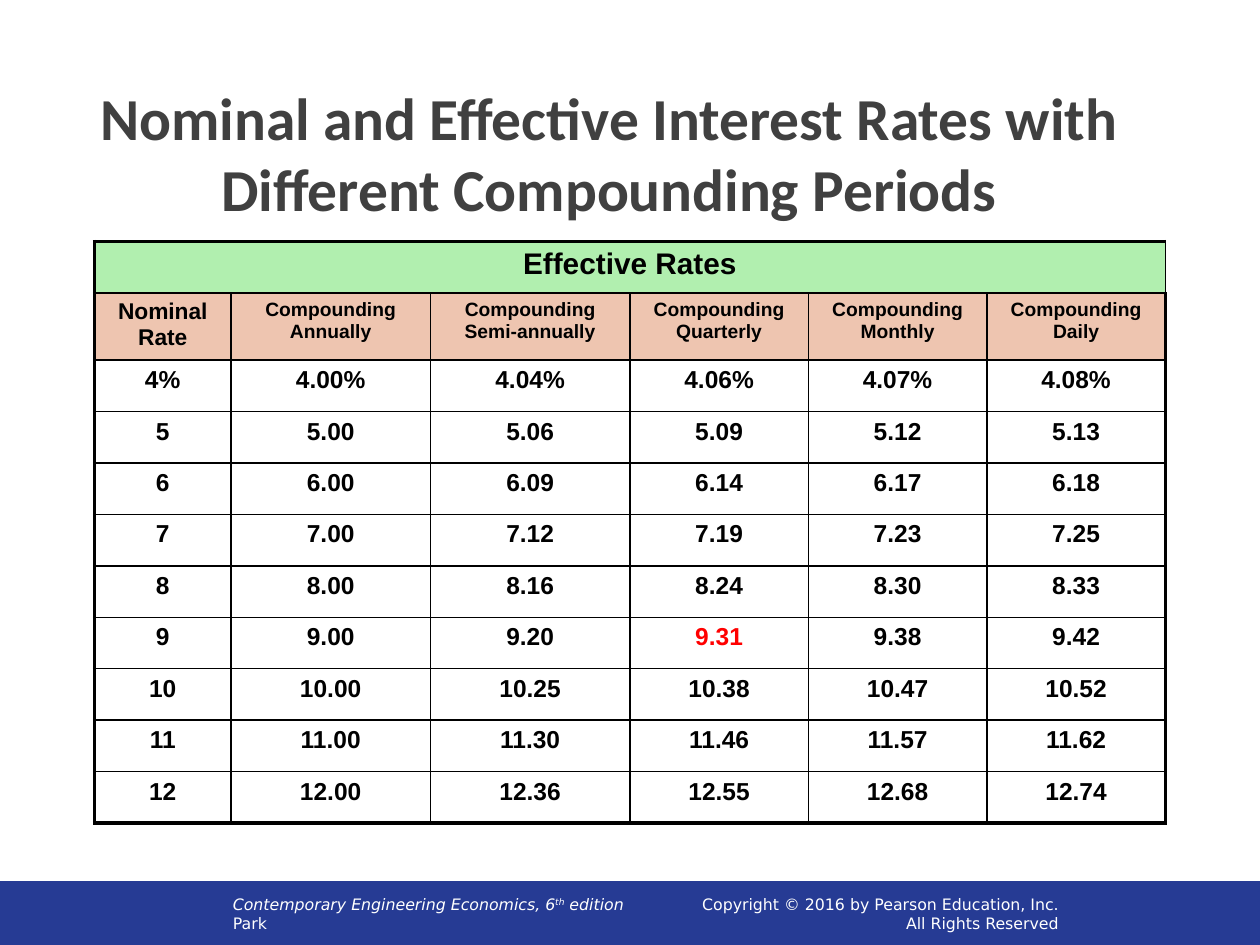
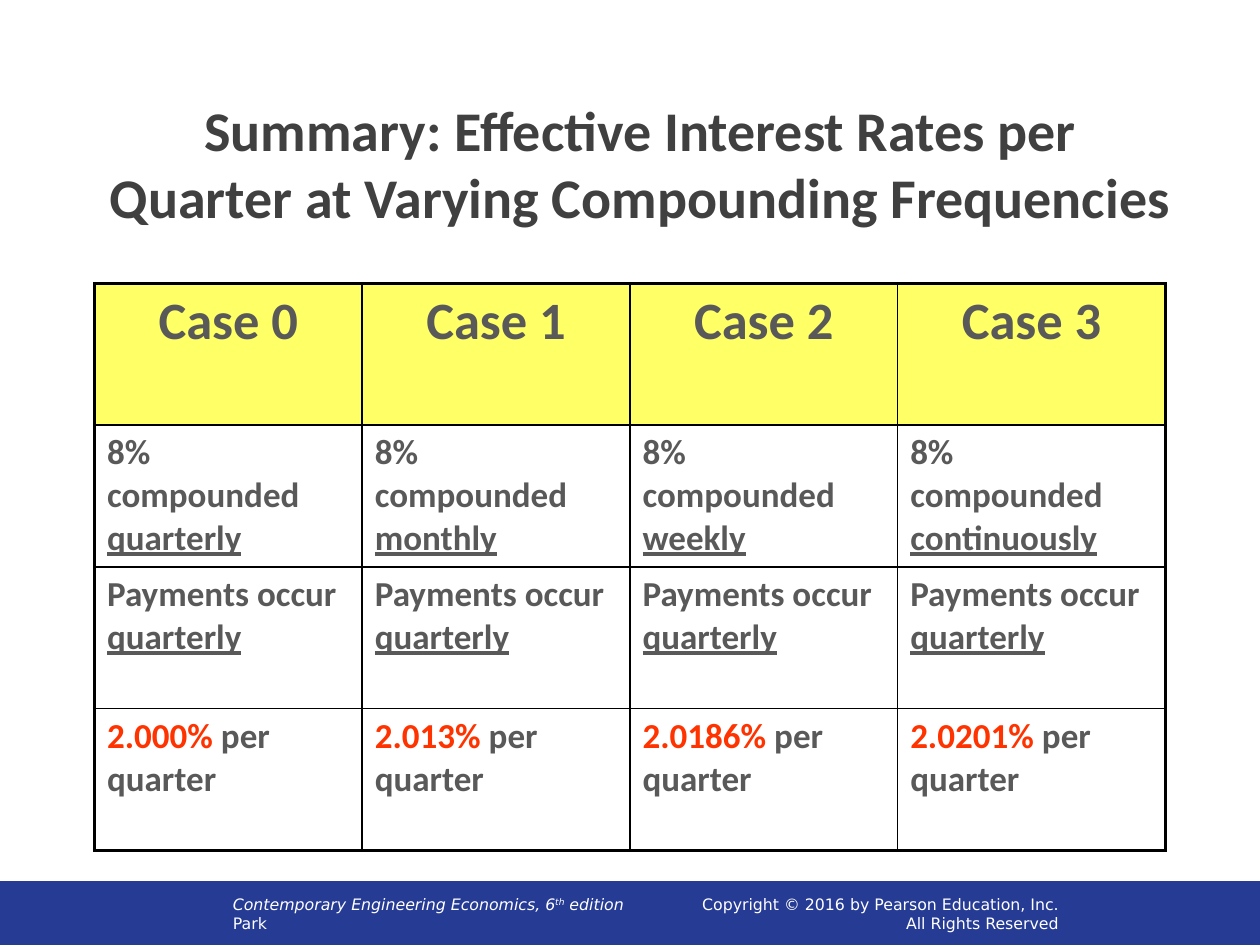
from lxml import etree
from pptx import Presentation
from pptx import util as u
from pptx.dml.color import RGBColor
from pptx.enum import shapes, text
from pptx.oxml.ns import qn

PX = 7620  # 120 px to the inch
BLACK = RGBColor(0x00, 0x00, 0x00)
WHITE = RGBColor(0xFF, 0xFF, 0xFF)
NAVY = RGBColor(0x26, 0x3B, 0x94)
TITLE_GREY = RGBColor(0x40, 0x40, 0x40)
BODY_GREY = RGBColor(0x59, 0x59, 0x59)
GREEN = RGBColor(0xB1, 0xEF, 0xAF)
PEACH = RGBColor(0xEE, 0xC5, 0xB0)
YELLOW = RGBColor(0xFF, 0xFF, 0x66)
RED = RGBColor(0xFF, 0x00, 0x00)
ORANGE = RGBColor(0xFF, 0x33, 0x00)
CENTER, RIGHT = text.PP_ALIGN.CENTER, text.PP_ALIGN.RIGHT
THIN, THICK = u.Pt(1), u.Pt(2.25)


def add_run(p, words, font, size, color, bold=False):
    r = p.add_run()
    r.text = words
    r.font.name, r.font.size, r.font.bold = font, u.Pt(size), bold
    r.font.color.rgb = color
    return r


def add_grid(slide, top, widths, heights, header_fills):
    """Add a table with thin inner lines, a thick frame and filled header rows."""
    table = slide.shapes.add_table(len(heights), len(widths), 90 * PX, top * PX,
                                   sum(widths) * PX, sum(heights) * PX).table
    table.first_row = table.horz_banding = False
    for column, width in zip(table.columns, widths):
        column.width = width * PX
    for row, height in zip(table.rows, heights):
        row.height = height * PX
    last_row, last_col = len(heights) - 1, len(widths) - 1
    for i, row in enumerate(table.rows):
        for j, cell in enumerate(row.cells):
            tcPr = cell._tc.get_or_add_tcPr()
            outer = {"lnL": j == 0, "lnR": j == last_col, "lnT": i == 0, "lnB": i == last_row}
            for side, is_outer in outer.items():
                ln = etree.SubElement(tcPr, qn("a:" + side), w=str(THICK if is_outer else THIN))
                fill = etree.SubElement(ln, qn("a:solidFill"))
                etree.SubElement(fill, qn("a:srgbClr"), val=str(BLACK))
            if i < len(header_fills):
                cell.fill.solid()
                cell.fill.fore_color.rgb = header_fills[i]
            else:
                cell.fill.background()
    return table


prs = Presentation()
prs.slide_width, prs.slide_height = 1200 * PX, 900 * PX
layout = prs.slide_layouts[5]

# Titles
titles = [
    ("Nominal and Effective Interest Rates with Different Compounding Periods",
     34, (70, 70, 1020, 150)),
    ("Summary: Effective Interest Rates per\vQuarter at Varying Compounding Frequencies",
     32, (90, 100, 1040, 110)),
]
for title, size, box in titles:
    sp = prs.slides.add_slide(layout).shapes.title
    sp.left, sp.top, sp.width, sp.height = [n * PX for n in box]
    tf = sp.text_frame
    tf.text = title
    tf.vertical_anchor = text.MSO_ANCHOR.MIDDLE
    tf.auto_size = text.MSO_AUTO_SIZE.NONE
    p = tf.paragraphs[0]
    p.alignment = CENTER
    for r in p.runs:
        r.font.name, r.font.size, r.font.bold = "Calibri", u.Pt(size), True
        r.font.color.rgb = TITLE_GREY
rates_slide, summary_slide = prs.slides

# Footer band, built once and moved to the slide master
band = rates_slide.shapes.add_shape(shapes.MSO_SHAPE.RECTANGLE, 0, 840 * PX, 1201 * PX, 60 * PX)
band.shadow.inherit = False
band.fill.solid()
band.fill.fore_color.rgb = band.line.color.rgb = NAVY
band.line.width = u.Pt(0.75)
book = rates_slide.shapes.add_textbox(210 * PX, 840 * PX, 739 * PX, 60 * PX)
rights = rates_slide.shapes.add_textbox(590 * PX, 840 * PX, 430 * PX, 60 * PX)
footer_lines = [
    (book, None, [["Contemporary Engineering Economics, 6", "th", " edition"], ["Park"]]),
    (rights, RIGHT, [["Copyright © 2016 by Pearson Education, Inc."], ["All Rights Reserved"]]),
]
for sp, align, lines in footer_lines:
    tf = sp.text_frame
    tf.word_wrap = True
    tf.vertical_anchor = text.MSO_ANCHOR.MIDDLE
    for i, parts in enumerate(lines):
        p = tf.add_paragraph() if i else tf.paragraphs[0]
        p.alignment = align
        for part in parts:
            r = add_run(p, part, "DejaVu Sans", 9, WHITE)
            r.font.italic = len(parts) > 1
            if part == "th":
                r.font._element.set("baseline", "30000")
for sp in (band, book, rights):
    prs.slide_master.shapes._spTree.append(sp._element)

# Slide 1: effective rates
rates = [
    ["Nominal Rate", "Compounding Annually", "Compounding Semi-annually",
     "Compounding Quarterly", "Compounding Monthly", "Compounding Daily"],
    ["4%", "4.00%", "4.04%", "4.06%", "4.07%", "4.08%"],
    ["5", "5.00", "5.06", "5.09", "5.12", "5.13"],
    ["6", "6.00", "6.09", "6.14", "6.17", "6.18"],
    ["7", "7.00", "7.12", "7.19", "7.23", "7.25"],
    ["8", "8.00", "8.16", "8.24", "8.30", "8.33"],
    ["9", "9.00", "9.20", "9.31", "9.38", "9.42"],
    ["10", "10.00", "10.25", "10.38", "10.47", "10.52"],
    ["11", "11.00", "11.30", "11.46", "11.57", "11.62"],
    ["12", "12.00", "12.36", "12.55", "12.68", "12.74"],
]
table = add_grid(rates_slide, 230, [130, 190, 190, 170, 170, 170],
                 [49, 64] + [49] * 9, [GREEN, PEACH])
table.cell(0, 0).merge(table.cell(0, 5))
p = table.cell(0, 0).text_frame.paragraphs[0]
p.alignment = CENTER
add_run(p, "Effective Rates", "Arial", 17, BLACK, True)
for i, row in enumerate(rates, start=1):
    for j, value in enumerate(row):
        p = table.cell(i, j).text_frame.paragraphs[0]
        p.alignment = CENTER
        size = 14 if i > 1 else 11 if j else 13
        add_run(p, value, "Arial", size, RED if value == "9.31" else BLACK, True)

# Slide 2: the four cases
cases = [("quarterly", "2.000%"), ("monthly", "2.013%"),
         ("weekly", "2.0186%"), ("continuously", "2.0201%")]
table = add_grid(summary_slide, 270, [255] * 4, [135] * 4, [YELLOW])
for j, (compounding, rate) in enumerate(cases):
    header, compounded, payments, result = [
        table.cell(i, j).text_frame.paragraphs[0] for i in range(4)]
    header.alignment = CENTER
    add_run(header, f"Case {j}", "Calibri", 30, BODY_GREY, True)
    for p, words, period in [(compounded, "8% compounded ", compounding),
                             (payments, "Payments occur ", "quarterly")]:
        add_run(p, words, "Calibri", 20, BODY_GREY, True)
        add_run(p, period, "Calibri", 20, BODY_GREY, True).font.underline = True
    add_run(result, rate, "Calibri", 20, ORANGE, True)
    add_run(result, " per quarter", "Calibri", 20, BODY_GREY, True)

prs.save("out.pptx")
